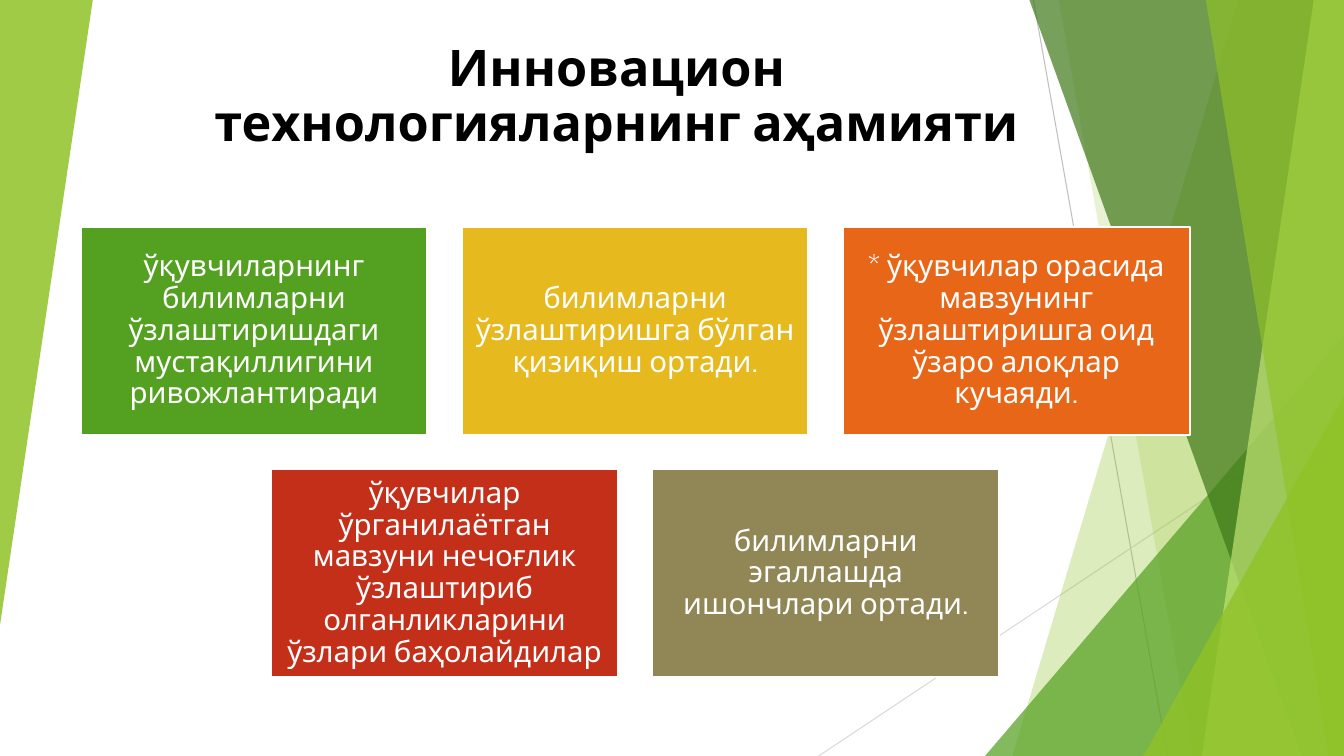
from dataclasses import dataclass

from lxml.etree import SubElement
from pptx import Presentation
from pptx.dml.color import RGBColor
from pptx.enum.shapes import MSO_CONNECTOR as Connector, MSO_SHAPE as Shape
from pptx.enum.text import MSO_ANCHOR as Anchor, PP_ALIGN as Align
from pptx.oxml.ns import qn
from pptx.util import Inches, Pt


@dataclass(frozen=True)
class Theme:
    font: str = "Cabin"
    title_size: int = 36
    card_size: int = 21
    black: str = "000000"
    white: str = "FFFFFF"
    lime: str = "90C226"
    green: str = "54A021"
    forest: str = "3F7819"
    pale: str = "C0E474"
    gold: str = "E6B91E"
    orange: str = "E76618"
    red: str = "C42F1A"
    olive: str = "918655"
    grey: str = "BFBFBF"
    light_grey: str = "D9D9D9"


THEME = Theme()
WIDTH, HEIGHT = 13.33, 7.5

CARDS = [
    ("ўқувчиларнинг билимларни ўзлаштиришдаги мустақиллигини ривожлантиради", THEME.green),
    ("билимларни ўзлаштиришга бўлган қизиқиш ортади.", THEME.gold),
    ("* ўқувчилар орасида мавзунинг ўзлаштиришга оид ўзаро алоқлар кучаяди.", THEME.orange),
    ("ўқувчилар ўрганилаётган мавзуни нечоғлик ўзлаштириб олганликларини ўзлари баҳолайдилар", THEME.red),
    ("билимларни эгаллашда ишончлари ортади.", THEME.olive),
]


def write_text(shape, text, *, size, color, bold=False, anchor=Anchor.MIDDLE, inset=0.09):
    frame = shape.text_frame
    frame.word_wrap = True
    frame.vertical_anchor = anchor
    frame.margin_left = frame.margin_right = Inches(0.09)
    frame.margin_top = frame.margin_bottom = Inches(inset)
    para = frame.paragraphs[0]
    para.alignment = Align.CENTER
    para.line_spacing = 0.9
    span = para.add_run()
    span.text = text
    span.font.name = THEME.font
    span.font.size = Pt(size)
    span.font.bold = bold
    span.font.color.rgb = RGBColor.from_string(color)


def paint(shape, color, opacity=100):
    shape.shadow.inherit = False
    shape.line.fill.background()
    shape.fill.solid()
    shape.fill.fore_color.rgb = RGBColor.from_string(color)
    if opacity < 100:
        tint = shape.fill._xPr.find(".//" + qn("a:srgbClr"))
        SubElement(tint, qn("a:alpha")).set("val", str(opacity * 1000))


def add_line(page, start, end, color):
    line = page.shapes.add_connector(Connector.STRAIGHT, *map(Inches, start + end))
    line.line.color.rgb = RGBColor.from_string(color)
    line.line.width = Pt(0.75)
    SubElement(line._element.spPr, qn("a:effectLst"))


def add_band(page, top_left, bottom_left, color, opacity):
    points = [(top_left, 0), (WIDTH, 0), (WIDTH, HEIGHT), (bottom_left, HEIGHT)]
    corners = [(Inches(x), Inches(y)) for x, y in points]
    builder = page.shapes.build_freeform(*corners[0], scale=1.0)
    builder.add_line_segments(corners[1:], close=True)
    paint(builder.convert_to_shape(), color, opacity)


def add_corner(page, box, color, opacity, rotation=0):
    corner = page.shapes.add_shape(Shape.ISOSCELES_TRIANGLE, *map(Inches, box))
    corner.adjustments[0] = 1
    corner.rotation = rotation
    paint(corner, color, opacity)


def add_backdrop(page):
    add_line(page, (10.25, 0), (11.58, HEIGHT), THEME.grey)
    add_line(page, (WIDTH, 4.03), (8.12, HEIGHT), THEME.light_grey)
    add_band(page, 12.28, 10.04, THEME.lime, 30)
    add_band(page, 10.5, 11.83, THEME.lime, 20)
    add_corner(page, (9.77, 3.33, 3.56, 4.17), THEME.green, 72)
    add_band(page, 10.21, 12.91, THEME.forest, 70)
    add_band(page, 13.03, 11.92, THEME.pale, 70)
    add_band(page, 11.96, 13.18, THEME.lime, 65)
    add_corner(page, (11.34, 3.93, 1.99, 3.57), THEME.lime, 80)
    add_corner(page, (0, 0, 0.92, 6.2), THEME.lime, 85, rotation=180)


def add_title(page, box):
    title = page.shapes.title
    title.left, title.top, title.width, title.height = map(Inches, box)
    write_text(title, "Инновацион технологияларнинг аҳамияти", size=THEME.title_size,
               color=THEME.black, bold=True, anchor=Anchor.BOTTOM, inset=0.05)


def add_card(page, box, text, color):
    card = page.shapes.add_shape(Shape.RECTANGLE, *map(Inches, box))
    paint(card, color)
    card.line.color.rgb = RGBColor.from_string(THEME.white)
    card.line.width = Pt(1.5)
    write_text(card, text, size=THEME.card_size, color=THEME.white)


def add_cards(page, box, columns=3, gap=0.34):
    left, top, width, height = box
    rows = [CARDS[i:i + columns] for i in range(0, len(CARDS), columns)]
    card_width = (width - gap * (columns - 1)) / columns
    card_height = (height - gap * (len(rows) - 1)) / len(rows)
    for index, row in enumerate(rows):
        indent = (columns - len(row)) * (card_width + gap) / 2
        for column, (text, color) in enumerate(row):
            x = left + indent + column * (card_width + gap)
            y = top + index * (card_height + gap)
            add_card(page, (x, y, card_width, card_height), text, color)


def main():
    deck = Presentation()
    deck.slide_width, deck.slide_height = Inches(WIDTH), Inches(HEIGHT)
    page = deck.slides.add_slide(deck.slide_layouts[5])
    add_backdrop(page)
    add_title(page, (1.87, -0.12, 8.49, 1.68))
    add_cards(page, (0.8, 2.25, 11, 4.47))
    deck.save("out.pptx")


if __name__ == "__main__":
    main()
